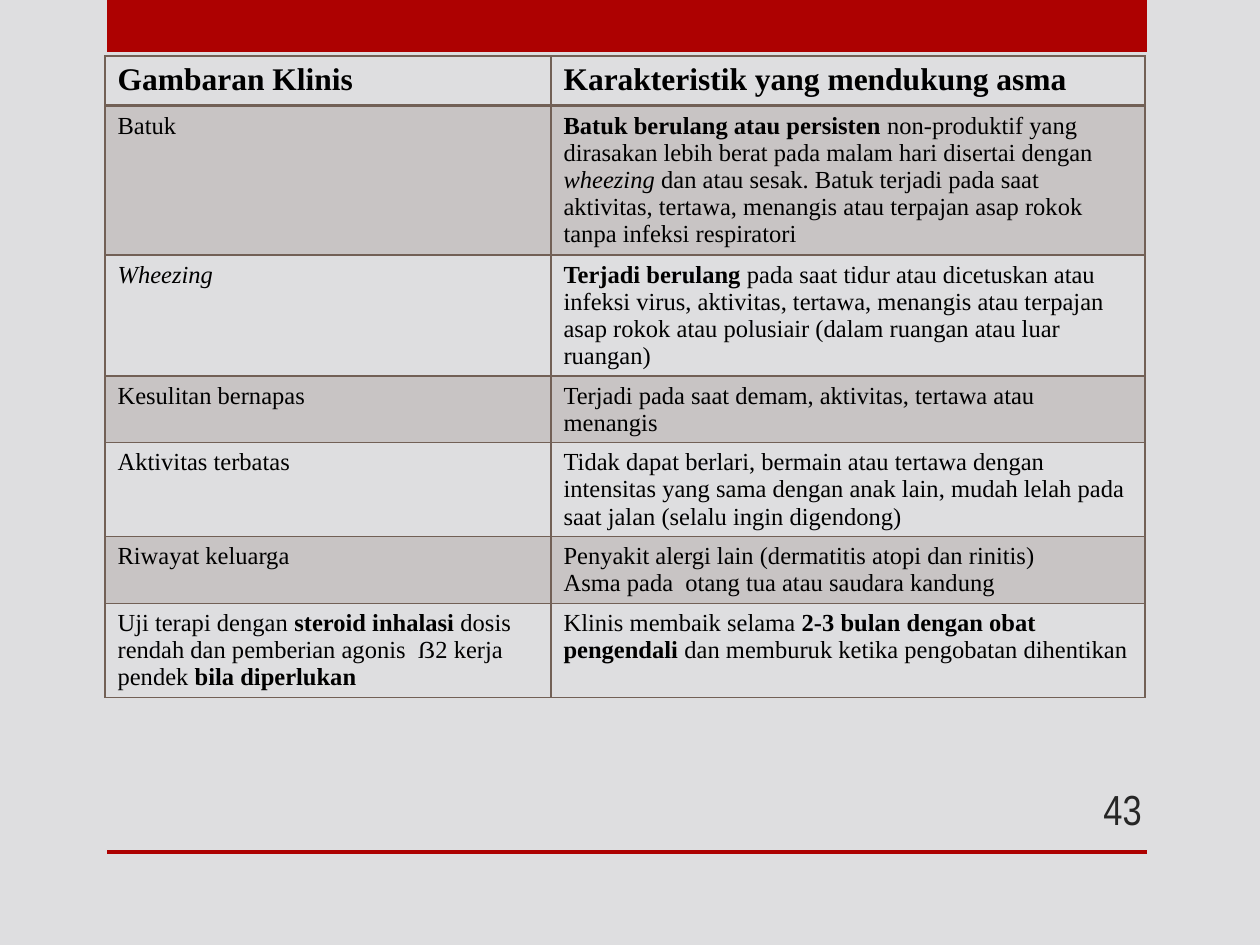
from lxml.etree import SubElement as Sub
from pptx import Presentation as Deck
from pptx.dml.color import RGBColor as RGB
from pptx.enum.shapes import MSO_SHAPE as Kind
from pptx.enum.text import MSO_ANCHOR as Anchor, PP_ALIGN as Align
from pptx.oxml import parse_xml as xml
from pptx.oxml.ns import nsdecls, qn
from pptx.util import Emu, Pt

PAPER = RGB(0xDE, 0xDE, 0xE0)
RED = RGB(0xAD, 0x01, 0x01)
BROWN = RGB(0x72, 0x60, 0x56)
BLACK = RGB(0, 0, 0)
GREY = RGB(0x26, 0x26, 0x26)
SERIF = "Times New Roman"
NARROW = "Arial Narrow"
BOLD, SLANT = "b", "i"

HEAD = ["Gambaran Klinis", "Karakteristik yang mendukung asma"]
ROWS = [
    ([["Batuk"]],
     [[("Batuk berulang atau persisten", BOLD),
       " non-produktif yang dirasakan lebih berat pada malam hari disertai dengan ",
       ("wheezing ", SLANT),
       "dan atau sesak. Batuk terjadi pada saat aktivitas, tertawa, menangis "
       "atau terpajan asap rokok tanpa infeksi respiratori"]]),
    ([[("Wheezing", SLANT)]],
     [[("Terjadi berulang ", BOLD),
       "pada saat tidur atau dicetuskan atau infeksi virus, aktivitas, tertawa, "
       "menangis atau terpajan asap rokok atau polusiair "
       "(dalam ruangan atau luar ruangan)"]]),
    ([["Kesulitan bernapas"]],
     [["Terjadi pada saat demam, aktivitas, tertawa atau menangis"]]),
    ([["Aktivitas terbatas"]],
     [["Tidak dapat berlari, bermain atau tertawa dengan intensitas yang sama "
       "dengan anak lain, mudah lelah pada saat jalan (selalu ingin digendong)"]]),
    ([["Riwayat keluarga"]],
     [["Penyakit alergi lain (dermatitis atopi dan rinitis)"],
      ["Asma pada  otang tua atau saudara kandung"]]),
    ([["Uji terapi dengan ", ("steroid inhalasi ", BOLD),
       "dosis rendah dan pemberian agonis  ẞ2 kerja pendek ",
       ("bila diperlukan", BOLD)]],
     [["Klinis membaik selama ", ("2-3 bulan dengan obat pengendali ", BOLD),
       "dan memburuk ketika pengobatan dihentikan"]]),
]
COLS = [446, 594]
TALL = [50, 149, 121, 66, 94, 67, 94]


def px(num):
    """Turn px into EMU."""
    return Emu(round(num * 914400 / 126))


class Page:
    """Hold the style and the current slide."""

    def __init__(self, deck):
        """Add a blank slide with the paper colour."""
        self.slide = deck.slides.add_slide(deck.slide_layouts[6])
        self.shapes = self.slide.shapes
        fill = self.slide.background.fill
        fill.solid()
        fill.fore_color.rgb = PAPER

    def bar(self, *box):
        """Draw a plain red bar."""
        bar = self.shapes.add_shape(Kind.RECTANGLE, *map(px, box))
        bar.shadow.inherit = False
        bar.fill.solid()
        bar.fill.fore_color.rgb = RED
        bar.line.fill.background()

    def text(self, frame, paras, size, face, tint, align=Align.LEFT):
        """Fill a text frame run by run."""
        for num, parts in enumerate(paras):
            para = frame.add_paragraph() if num else frame.paragraphs[0]
            para.alignment = align
            for part in parts:
                words, mark = (part, "") if isinstance(part, str) else part
                run = para.add_run()
                run.text = words
                font = run.font
                font.size, font.name = Pt(size), face
                font.color.rgb = tint
                font.bold, font.italic = mark == BOLD, mark == SLANT

    def label(self, words, box, size, face, tint):
        """Add a right-aligned text box."""
        frame = self.shapes.add_textbox(*map(px, box)).text_frame
        frame.word_wrap = True
        frame.vertical_anchor = Anchor.MIDDLE
        self.text(frame, [[words]], size, face, tint, Align.RIGHT)

    def edge(self, cell, row):
        """Rule the four sides of a cell."""
        wide = {"T": 2 if row == 1 else 1, "B": 2 if row == 0 else 1}
        for spot, side in enumerate("LRTB"):
            line = xml(f'<a:ln{side} {nsdecls("a")} w="{Pt(wide.get(side, 1))}">'
                       f'<a:solidFill><a:srgbClr val="{BROWN}"/></a:solidFill>'
                       f'</a:ln{side}>')
            cell._tc.get_or_add_tcPr().insert(spot, line)

    def shade(self, cell, row):
        """Tint every odd row and leave the rest clear."""
        if row % 2 == 0:
            cell.fill.background()
            return
        cell.fill.solid()
        cell.fill.fore_color.rgb = BROWN
        tone = cell._tc.tcPr.find(qn("a:solidFill"))[0]
        Sub(tone, qn("a:alpha")).set("val", "20000")

    def table(self, left, top, head, rows):
        """Add the ruled table with its header row."""
        box = map(px, (left, top, sum(COLS), sum(TALL)))
        grid = self.shapes.add_table(len(TALL), len(COLS), *box).table
        grid.horz_banding = grid.first_row = False
        for col, wide in zip(grid.columns, COLS):
            col.width = px(wide)
        for row, tall in zip(grid.rows, TALL):
            row.height = px(tall)
        lines = [[[[(words, BOLD)]] for words in head], *rows]
        for row, line in enumerate(lines):
            for col, paras in enumerate(line):
                cell = grid.cell(row, col)
                self.shade(cell, row)
                self.edge(cell, row)
                size = 14 if row else 18
                self.text(cell.text_frame, paras, size, SERIF, BLACK)


def main():
    """Build the slide and save it."""
    deck = Deck()
    deck.slide_width, deck.slide_height = px(1260), px(945)
    page = Page(deck)
    page.bar(107, 0, 1040, 52)
    page.bar(107, 850, 1040, 4)
    page.table(105, 56, HEAD, ROWS)
    page.label("43", (1050, 784, 104, 50), 24, NARROW, GREY)
    deck.save("out.pptx")


if __name__ == "__main__":
    main()
